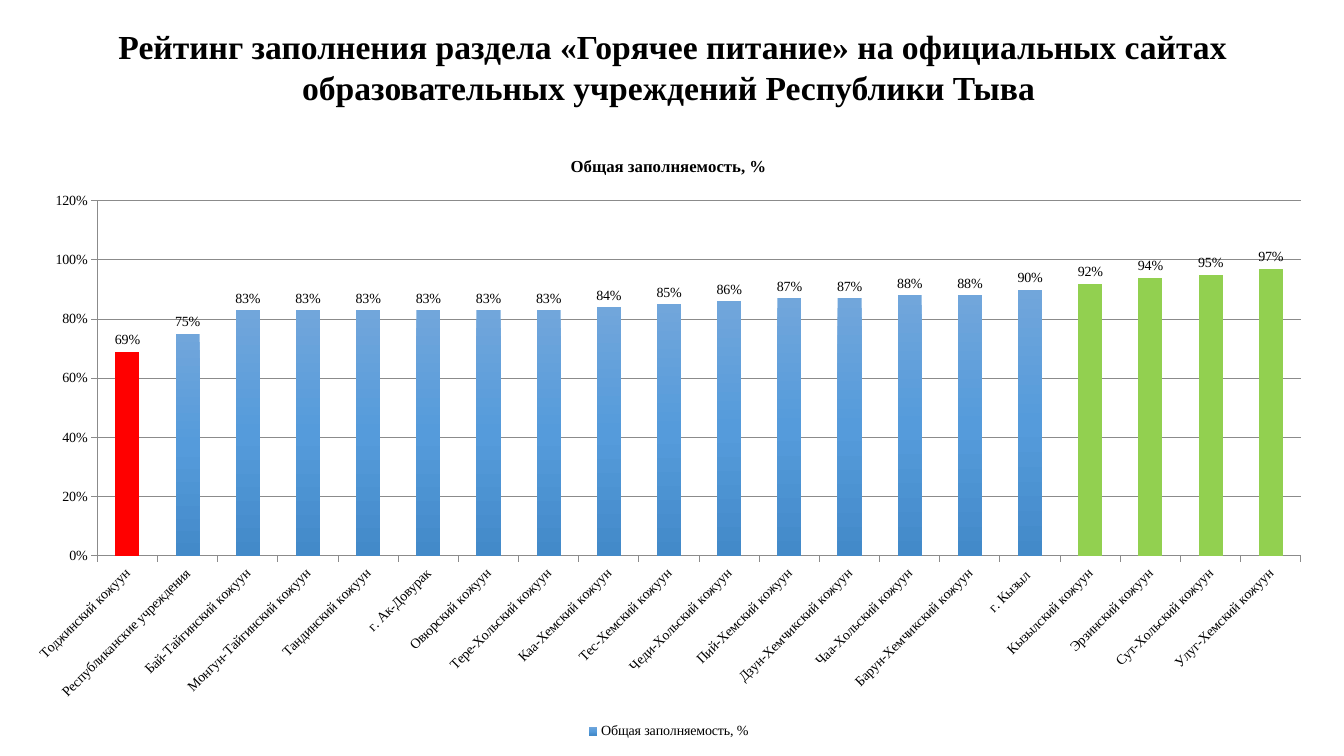
import copy
import pptx
import pptx.chart.data
import pptx.dml.color
import pptx.enum.chart
import pptx.enum.text
import pptx.oxml.ns
import pptx.util

TITLE = ("Рейтинг заполнения раздела «Горячее питание» на официальных сайтах "
         "образовательных учреждений Республики Тыва ")
SERIES = "Общая заполняемость, %"
RATING = [
    ("Тоджинский кожуун", 0.69),
    ("Республиканские учреждения", 0.75),
    ("Бай-Тайгинский кожуун", 0.83),
    ("Монгун-Тайгинский кожуун", 0.83),
    ("Тандинский кожуун", 0.83),
    ("г. Ак-Довурак", 0.83),
    ("Овюрский кожуун", 0.83),
    ("Тере-Хольский кожуун", 0.83),
    ("Каа-Хемский кожуун", 0.84),
    ("Тес-Хемский кожуун", 0.85),
    ("Чеди-Хольский кожуун", 0.86),
    ("Пий-Хемский кожуун", 0.87),
    ("Дзун-Хемчикский кожуун", 0.87),
    ("Чаа-Хольский кожуун", 0.88),
    ("Барун-Хемчикский кожуун", 0.88),
    ("г. Кызыл ", 0.9),
    ("Кызылский кожуун", 0.92),
    ("Эрзинский кожуун", 0.94),
    ("Сут-Хольский кожуун", 0.95),
    ("Улуг-Хемский кожуун", 0.97),
]
LOW, HIGH = 0.7, 0.91
WIDTH, HEIGHT = 13.33, 7.5
TITLE_BOX = (0.076, 0.028, 0.849, 0.121)
CHART_BOX = (0.0075, 0.179, 0.98, 0.804)
THEME = {
    "font": "Times New Roman",
    "text": "000000", "line": "8B8B8B",
    "low": "FF0000", "high": "92D050",
    "bar": ("71A6DB", "559BDB", "438AC9"),
    "title": 24, "chart_title": 12, "body": 10,
}


def rgb(value):
    return pptx.dml.color.RGBColor.from_string(value)


def place(box):
    return [pptx.util.Inches(share * side)
            for share, side in zip(box, (WIDTH, HEIGHT) * 2)]


def set_font(font, size, bold=False):
    font.name = THEME["font"]
    font.size = pptx.util.Pt(size)
    font.bold = bold
    font.color.rgb = rgb(THEME["text"])


def write(tf, text, size, bold=False):
    p = tf.paragraphs[0]
    p.alignment = pptx.enum.text.PP_ALIGN.CENTER
    r = p.add_run()
    r.text = text
    set_font(r.font, size, bold)


def fill_gradient(series):
    fill = series.format.fill
    fill.gradient()
    fill.gradient_angle = 270
    stops = series._element.find(".//" + pptx.oxml.ns.qn("a:gsLst"))
    stops.insert(1, copy.deepcopy(stops[0]))
    for i, stop in enumerate(fill.gradient_stops):
        stop.position = i / 2
        stop.color.rgb = rgb(THEME["bar"][i])


def style_axis(axis):
    axis.major_tick_mark = pptx.enum.chart.XL_TICK_MARK.OUTSIDE
    axis.format.line.color.rgb = rgb(THEME["line"])
    set_font(axis.tick_labels.font, THEME["body"])


def add_rating_chart(s):
    kinds = pptx.enum.chart
    data = pptx.chart.data.CategoryChartData(number_format="0%")
    data.categories = [name for name, _ in RATING]
    data.add_series(SERIES, [value for _, value in RATING])
    chart = s.shapes.add_chart(
        kinds.XL_CHART_TYPE.COLUMN_CLUSTERED, *place(CHART_BOX), data).chart
    set_font(chart.font, THEME["body"])
    chart.has_title = True
    write(chart.chart_title.text_frame, SERIES, THEME["chart_title"], bold=True)
    chart.has_legend = True
    chart.legend.position = kinds.XL_LEGEND_POSITION.BOTTOM
    chart.legend.include_in_layout = False
    set_font(chart.legend.font, THEME["body"])

    for axis in (chart.category_axis, chart.value_axis):
        style_axis(axis)
    body = chart.category_axis._element.find(".//" + pptx.oxml.ns.qn("a:bodyPr"))
    body.set("rot", str(-45 * 60000))
    values = chart.value_axis
    values.minimum_scale, values.maximum_scale, values.major_unit = 0, 1.2, 0.2
    values.major_gridlines.format.line.color.rgb = rgb(THEME["line"])
    values.tick_labels.number_format = "0%"
    values.tick_labels.number_format_is_linked = False

    plot = chart.plots[0]
    plot.gap_width = 150
    plot.vary_by_categories = False
    series = plot.series[0]
    fill_gradient(series)
    for i, (_, value) in enumerate(RATING):
        if value < LOW or value > HIGH:
            fill = series.points[i].format.fill
            fill.solid()
            fill.fore_color.rgb = rgb(THEME["low" if value < LOW else "high"])
    labels = series.data_labels
    labels.show_value = True
    labels.number_format = "0%"
    labels.number_format_is_linked = False
    labels.position = kinds.XL_LABEL_POSITION.OUTSIDE_END
    set_font(labels.font, THEME["body"])


def main():
    prs = pptx.Presentation()
    prs.slide_width = pptx.util.Inches(WIDTH)
    prs.slide_height = pptx.util.Inches(HEIGHT)
    s = prs.slides.add_slide(prs.slide_layouts[6])
    tf = s.shapes.add_textbox(*place(TITLE_BOX)).text_frame
    tf.word_wrap = True
    write(tf, TITLE, THEME["title"], bold=True)
    add_rating_chart(s)
    prs.save("out.pptx")


if __name__ == "__main__":
    main()
